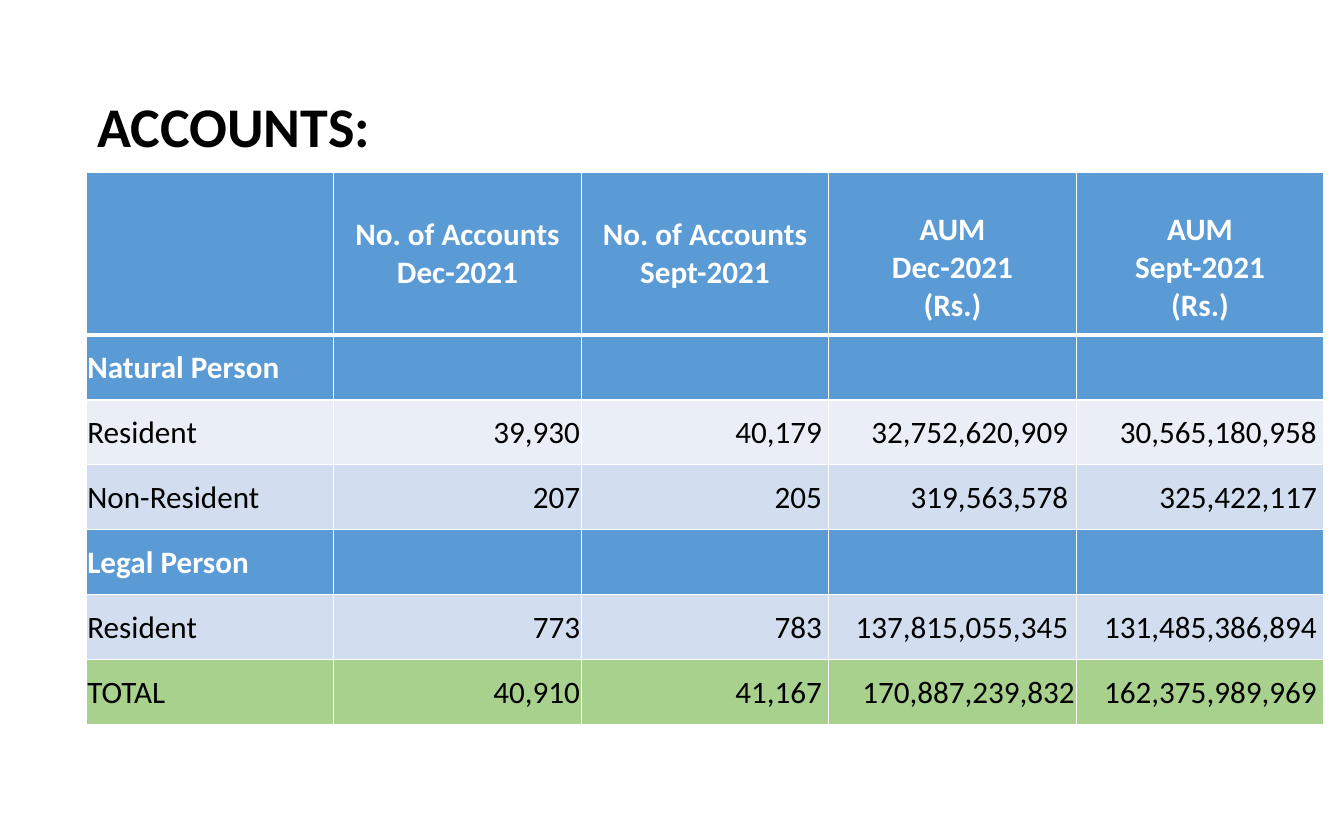
from lxml import etree
from pptx import Presentation, util as u
from pptx.dml.color import RGBColor
from pptx.enum import text
from pptx.oxml import ns

BLUE, PALE, LIGHT, GREEN = "5B9BD5", "EAEFF7", "D2DEEF", "A9D18E"
WHITE, BLACK = "FFFFFF", "000000"
LEFT, CENTER, RIGHT = text.PP_ALIGN.LEFT, text.PP_ALIGN.CENTER, text.PP_ALIGN.RIGHT

HEADERS = ["", "No. of Accounts\nDec-2021", "No. of Accounts\nSept-2021",
           "AUM\nDec-2021\n(Rs.)", "AUM\nSept-2021\n(Rs.)"]
# Each row: fill, then the cell texts
ROWS = [
    (BLUE, ["Natural Person", "", "", "", ""]),
    (PALE, ["Resident", "39,930", "40,179", "32,752,620,909", "30,565,180,958"]),
    (LIGHT, ["Non-Resident", "207", "205", "319,563,578", "325,422,117"]),
    (BLUE, ["Legal Person", "", "", "", ""]),
    (LIGHT, ["Resident", "773", "783", "137,815,055,345", "131,485,386,894"]),
    (GREEN, ["TOTAL", "40,910", "41,167", "170,887,239,832", "162,375,989,969"]),
]
RIGHT_INSETS = [0.01, 0.01, 0.06, 0.07, 0.06]


def color(value):
    return RGBColor.from_string(value)


class Slide:
    font = "Calibri"

    def __init__(self, page):
        self.page = page

    def set_text(self, frame, content, size, ink, bold, align=LEFT):
        frame.text = content
        for para in frame.paragraphs:
            para.alignment = align
            para.font.name = self.font
            para.font.size = u.Pt(size)
            para.font.bold = bold
            para.font.color.rgb = color(ink)

    def title(self, content, left, top, width, height):
        box = self.page.shapes.add_textbox(*map(u.Inches, (left, top, width, height)))
        frame = box.text_frame
        frame.word_wrap = True
        frame.vertical_anchor = text.MSO_ANCHOR.MIDDLE
        self.set_text(frame, content, 36, BLACK, True)
        frame.paragraphs[0].line_spacing = 0.9

    def table(self, left, top, widths, heights):
        frame = self.page.shapes.add_table(
            len(heights), len(widths), u.Inches(left), u.Inches(top),
            u.Inches(sum(widths)), u.Inches(sum(heights)))
        for column, width in zip(frame.table.columns, widths):
            column.width = u.Inches(width)
        for row, height in zip(frame.table.rows, heights):
            row.height = u.Inches(height)
        return frame.table

    def borders(self, cell, **widths):
        properties = cell._tc.get_or_add_tcPr()
        for side, width in widths.items():
            line = etree.SubElement(properties, ns.qn(f"a:ln{side}"), w=str(u.Pt(width)))
            fill = etree.SubElement(line, ns.qn("a:solidFill"))
            etree.SubElement(fill, ns.qn("a:srgbClr"), val=WHITE)

    def cell(self, cell, content, fill, ink, bold, align, insets, top=1, bottom=1):
        self.borders(cell, L=1, R=1, T=top, B=bottom)
        cell.fill.solid()
        cell.fill.fore_color.rgb = color(fill)
        cell.vertical_anchor = text.MSO_ANCHOR.MIDDLE
        (cell.margin_left, cell.margin_top,
         cell.margin_right, cell.margin_bottom) = map(u.Inches, insets)
        self.set_text(cell.text_frame, content, 20, ink, bold, align)


def main():
    deck = Presentation()
    deck.slide_width, deck.slide_height = u.Inches(12), u.Inches(7.5)
    slide = Slide(deck.slides.add_slide(deck.slide_layouts[6]))

    # Title
    slide.title("ACCOUNTS:", 0.77, 0.43, 10.35, 1.45)

    # Table header
    table = slide.table(0.77, 1.54, [2.21] * 5, [1.45] + [0.58] * 6)
    for column, label in enumerate(HEADERS):
        drop = 0.25 if label.startswith("AUM") else 0.01
        slide.cell(table.cell(0, column), label, BLUE, WHITE, True, CENTER,
                   (0.01, drop, 0.01, 0), bottom=3)

    # Table body: blue rows are section headings
    for row, (fill, values) in enumerate(ROWS, 1):
        section = fill == BLUE
        for column, value in enumerate(values):
            inset = RIGHT_INSETS[column]
            if (values[0], column) == ("TOTAL", 3):
                inset = 0.01
            slide.cell(table.cell(row, column), value, fill,
                       WHITE if section else BLACK, section,
                       RIGHT if column else LEFT, (0.01, 0.01, inset, 0),
                       top=3 if row == 1 else 1)

    deck.save("out.pptx")


if __name__ == "__main__":
    main()
